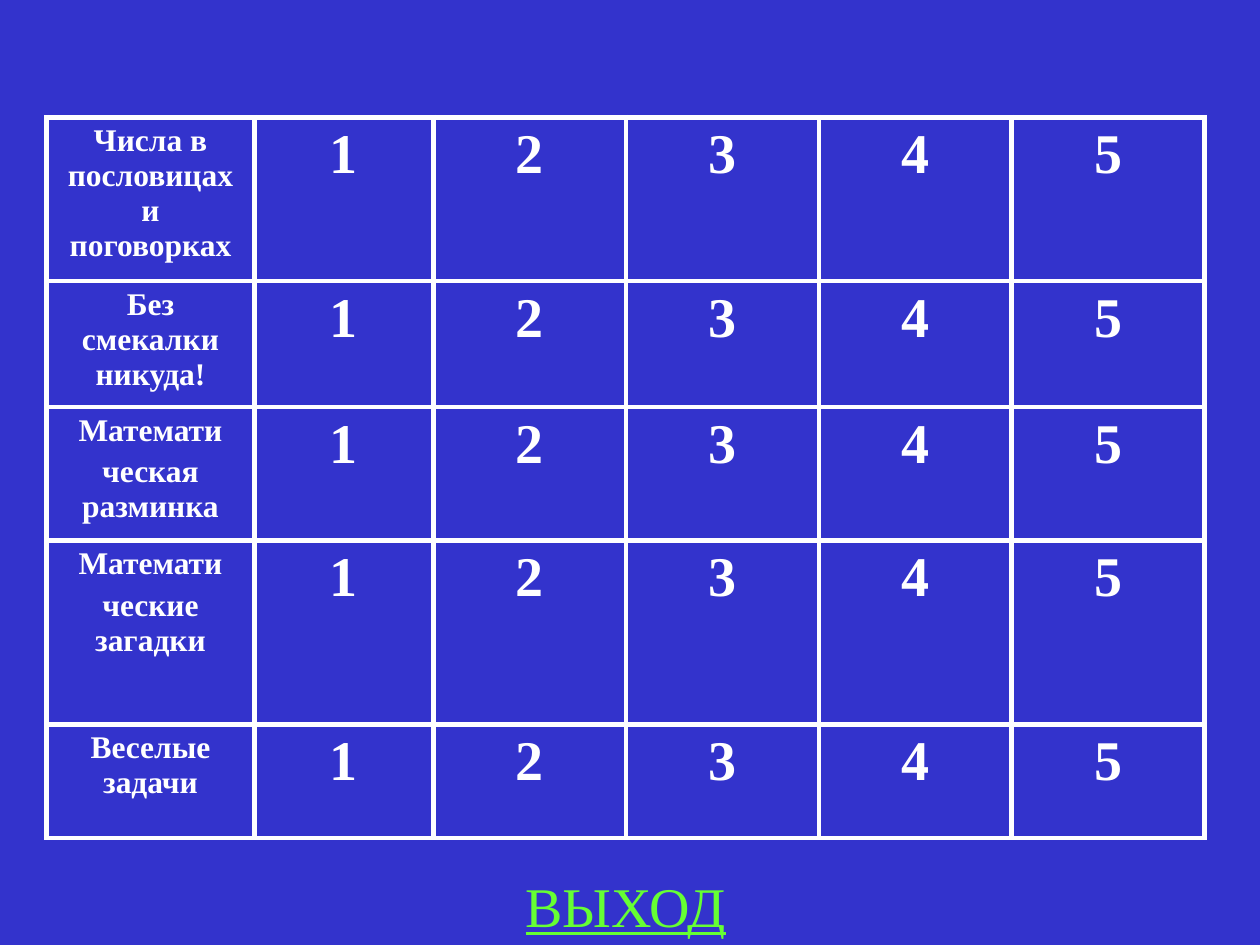
from lxml.etree import SubElement
from pptx import Presentation
from pptx.dml.color import RGBColor
from pptx.enum.text import MSO_AUTO_SIZE, PP_ALIGN
from pptx.oxml.ns import qn
from pptx.util import Pt

COLORS = {"background": "3333CC", "text": "FFFFFF", "border": "FFFFFF", "exit": "66FF33"}
FONT = "Times New Roman"
TOPICS = [
    ["Числа в пословицах и поговорках"],
    ["Без смекалки никуда!"],
    ["Математи", "ческая разминка"],
    ["Математи", "ческие загадки"],
    ["Веселые задачи"],
]
LEVELS = ["1", "2", "3", "4", "5"]
COL_WIDTHS = [118.8, 102.2] + [110.2] * 4
ROW_HEIGHTS = [93.6, 72, 76.3, 105.1, 64.8]


def write_text(tf, paragraphs, size, color="text", bold=False, underline=False, space=0):
    """Fill a text frame with centred paragraphs; space is a share of the font size."""
    for i, text in enumerate(paragraphs):
        p = tf.paragraphs[0] if i == 0 else tf.add_paragraph()
        p.alignment = PP_ALIGN.CENTER
        p.space_before = Pt(size * space)
        r = p.add_run()
        r.text = text
        r.font.name = FONT
        r.font.size = Pt(size)
        r.font.bold = bold
        r.font.underline = underline
        r.font.color.rgb = RGBColor.from_string(COLORS[color])


def add_borders(cell, width):
    tc_pr = cell._tc.get_or_add_tcPr()
    for side in ("lnL", "lnR", "lnT", "lnB"):
        ln = SubElement(tc_pr, qn(f"a:{side}"), w=str(Pt(width)))
        fill = SubElement(ln, qn("a:solidFill"))
        SubElement(fill, qn("a:srgbClr"), val=COLORS["border"])


def add_question_table(s, left, top):
    table = s.shapes.add_table(
        len(TOPICS), len(LEVELS) + 1, Pt(left), Pt(top),
        Pt(sum(COL_WIDTHS)), Pt(sum(ROW_HEIGHTS)),
    ).table
    table.first_row = table.horz_banding = False
    for column, width in zip(table.columns, COL_WIDTHS):
        column.width = Pt(width)
    for row, height, topic in zip(table.rows, ROW_HEIGHTS, TOPICS):
        row.height = Pt(height)
        contents = [topic] + [[level] for level in LEVELS]
        for i, (cell, paragraphs) in enumerate(zip(row.cells, contents)):
            add_borders(cell, 3)
            cell.fill.background()
            write_text(cell.text_frame, paragraphs, 18 if i == 0 else 32, bold=True, space=0.2)


def add_exit_label(s, left, top, width, height):
    tf = s.shapes.add_textbox(Pt(left), Pt(top), Pt(width), Pt(height)).text_frame
    tf.word_wrap = False
    tf.auto_size = MSO_AUTO_SIZE.SHAPE_TO_FIT_TEXT
    write_text(tf, ["ВЫХОД"], 32, color="exit", underline=True)


def main():
    prs = Presentation()
    prs.slide_width, prs.slide_height = Pt(720), Pt(540)
    s = prs.slides.add_slide(prs.slide_layouts[6])
    s.background.fill.solid()
    s.background.fill.fore_color.rgb = RGBColor.from_string(COLORS["background"])
    add_question_table(s, 26.6, 67)
    add_exit_label(s, 291.6, 494.6, 131.8, 45.4)
    prs.save("out.pptx")


if __name__ == "__main__":
    main()
